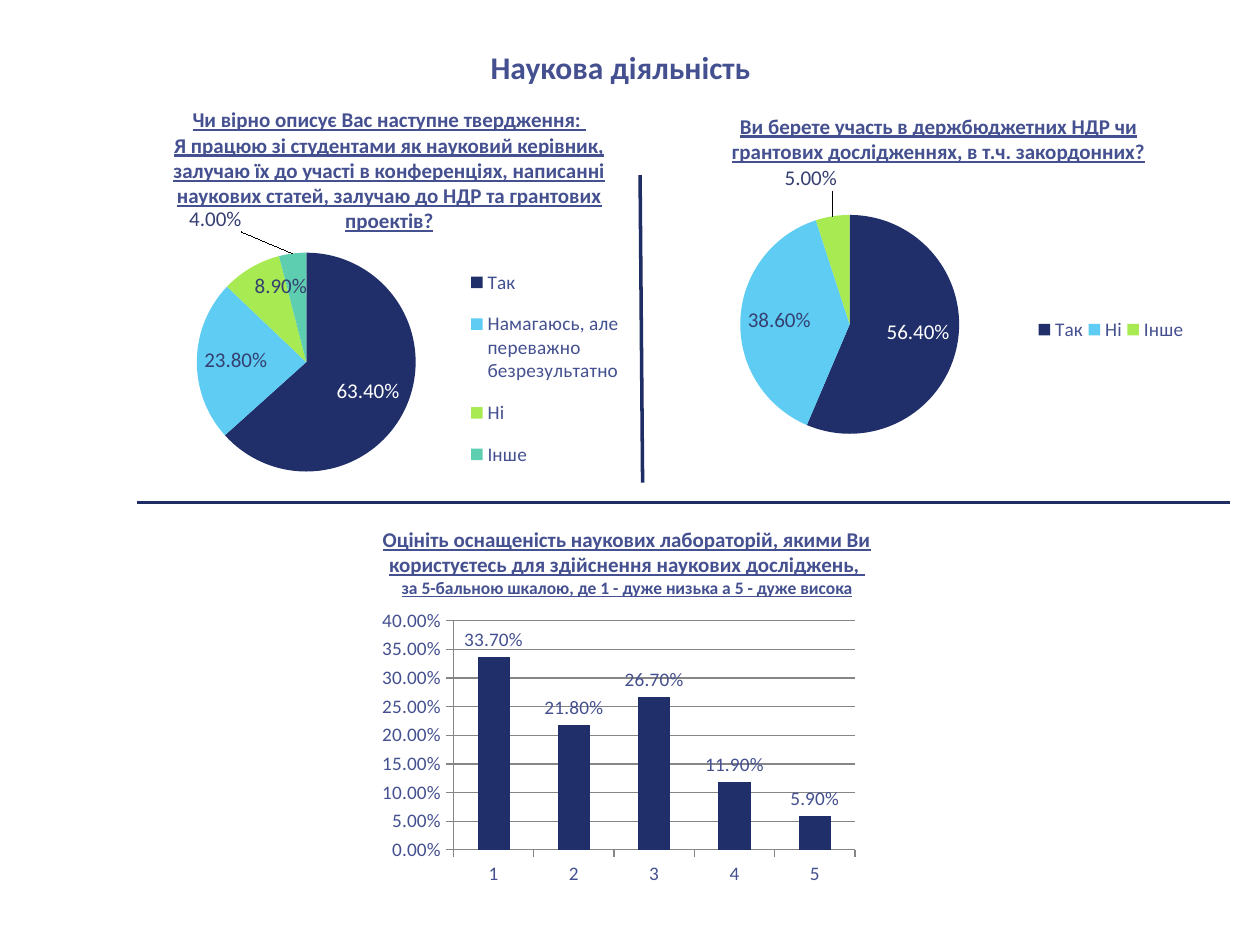
import pptx
import pptx.chart.data
import pptx.dml.color
import pptx.enum.chart
import pptx.enum.shapes
import pptx.enum.text
import pptx.oxml
import pptx.oxml.ns
import pptx.util
from pptx.util import Inches

RGBColor = pptx.dml.color.RGBColor
CHART_TYPE = pptx.enum.chart.XL_CHART_TYPE
LABEL_POSITION = pptx.enum.chart.XL_LABEL_POSITION

FONT = "Calibri"
TEXT_BLUE = RGBColor(0x44, 0x50, 0x8F)
LABEL_BLUE = RGBColor(0x35, 0x3F, 0x70)
RULE_NAVY = RGBColor(0x1F, 0x2D, 0x65)
NAVY = RGBColor(0x20, 0x2F, 0x6A)
SKY = RGBColor(0x5E, 0xCC, 0xF3)
LIME = RGBColor(0xA7, 0xEA, 0x52)
TEAL = RGBColor(0x5D, 0xCE, 0xAF)
GRID_GREY = RGBColor(0x86, 0x86, 0x86)
WHITE = RGBColor(0xFF, 0xFF, 0xFF)
PERCENT = "0.00%"


def style_font(font, size, color=TEXT_BLUE):
    font.name = FONT
    font.size = pptx.util.Pt(size)
    font.color.rgb = color


def set_layout(parent, index, **values):
    """Give a chart part a manual layout; values are shares of the chart."""
    for old in parent.findall(pptx.oxml.ns.qn("c:layout")):
        parent.remove(old)
    settings = "".join(f'<c:{tag} val="{value}"/>' for tag, value in values.items())
    parent.insert(index, pptx.oxml.parse_xml(
        f'<c:layout {pptx.oxml.ns.nsdecls("c")}>'
        f"<c:manualLayout>{settings}</c:manualLayout></c:layout>"))


def set_box_layout(parent, index, box, target=None):
    inner = {"layoutTarget": target} if target else {}
    x, y, w, h = box
    set_layout(parent, index, **inner, xMode="edge", yMode="edge", x=x, y=y, w=w, h=h)


def add_title(slide, box, text):
    title = slide.shapes.title
    title.left, title.top, title.width, title.height = map(Inches, box)
    title.text_frame.text = text
    title.text_frame.vertical_anchor = pptx.enum.text.MSO_ANCHOR.TOP
    paragraph = title.text_frame.paragraphs[0]
    paragraph.alignment = pptx.enum.text.PP_ALIGN.CENTER
    style_font(paragraph.runs[0].font, 18)
    paragraph.runs[0].font.bold = True


def add_question(slide, box, lines):
    """Place an underlined heading; lines are (text, size) pairs."""
    frame = slide.shapes.add_textbox(*map(Inches, box)).text_frame
    frame.word_wrap = True
    frame.auto_size = pptx.enum.text.MSO_AUTO_SIZE.SHAPE_TO_FIT_TEXT
    frame.text = "\n".join(text for text, _ in lines)
    for paragraph, (_, size) in zip(frame.paragraphs, lines):
        paragraph.alignment = pptx.enum.text.PP_ALIGN.CENTER
        font = paragraph.runs[0].font
        style_font(font, size)
        font.bold = font.underline = True


def add_rule(slide, start, end):
    rule = slide.shapes.add_connector(
        pptx.enum.shapes.MSO_CONNECTOR.STRAIGHT, *map(Inches, start + end))
    rule.line.color.rgb = RULE_NAVY
    rule.line.width = pptx.util.Pt(2)
    rule.element.spPr.append(
        pptx.oxml.parse_xml(f'<a:effectLst {pptx.oxml.ns.nsdecls("a")}/>'))


def add_chart(slide, box, kind, answers, plot_box):
    data = pptx.chart.data.CategoryChartData(number_format=PERCENT)
    data.categories = list(answers)
    data.add_series("Series 1", list(answers.values()))
    chart = slide.shapes.add_chart(kind, *map(Inches, box), data).chart
    chart.has_title = False
    chart.has_legend = False
    style_font(chart.font, 11)
    set_box_layout(chart.element.xpath(".//c:plotArea")[0], 0, plot_box, "inner")
    return chart


def add_pie(slide, box, answers, plot_box, legend_box, label_shift):
    """Place a pie whose last, smallest slice has its label pulled outside."""
    chart = add_chart(slide, box, CHART_TYPE.PIE, answers, plot_box)
    chart.has_legend = True
    chart.legend.position = pptx.enum.chart.XL_LEGEND_POSITION.RIGHT
    chart.legend.include_in_layout = False
    style_font(chart.legend.font, 11)
    set_box_layout(chart.element.xpath(".//c:legend")[0], 1, legend_box)

    slices = chart.plots[0].series[0]
    labels = slices.data_labels
    labels.show_value = True
    labels.number_format = PERCENT
    labels.number_format_is_linked = False
    labels.position = LABEL_POSITION.INSIDE_END
    style_font(labels.font, 12, LABEL_BLUE)
    for index, color in zip(range(len(answers)), (NAVY, SKY, LIME, TEAL)):
        fill = slices.points[index].format.fill
        fill.solid()
        fill.fore_color.rgb = color

    # White label on the dark slice, shifted label on the smallest one
    last = len(answers) - 1
    for index, color, position in (
            (0, WHITE, LABEL_POSITION.INSIDE_END),
            (last, LABEL_BLUE, LABEL_POSITION.OUTSIDE_END)):
        label = slices.points[index].data_label
        style_font(label.font, 12, color)
        label.position = position
    dx, dy = label_shift
    small_label = chart.element.xpath(f".//c:dLbl[c:idx/@val='{last}']")[0]
    set_layout(small_label, 1, x=dx, y=dy)


def add_ratings(slide, box, answers, plot_box):
    chart = add_chart(slide, box, CHART_TYPE.COLUMN_CLUSTERED, answers, plot_box)
    plot = chart.plots[0]
    plot.gap_width = 150
    plot.vary_by_categories = False
    bars = plot.series[0]
    bars.format.fill.solid()
    bars.format.fill.fore_color.rgb = NAVY
    bars.data_labels.show_value = True
    bars.data_labels.position = LABEL_POSITION.OUTSIDE_END
    style_font(bars.data_labels.font, 11)

    shares = chart.value_axis
    shares.minimum_scale, shares.maximum_scale, shares.major_unit = 0, 0.4, 0.05
    shares.has_major_gridlines = True
    shares.major_gridlines.format.line.color.rgb = GRID_GREY
    shares.tick_labels.number_format = PERCENT
    shares.tick_labels.number_format_is_linked = False
    for axis in (shares, chart.category_axis):
        axis.major_tick_mark = pptx.enum.chart.XL_TICK_MARK.OUTSIDE
        axis.format.line.color.rgb = GRID_GREY
        style_font(axis.tick_labels.font, 11)


def main():
    deck = pptx.Presentation()
    deck.slide_width, deck.slide_height = Inches(10), Inches(7.5)
    slide = deck.slides.add_slide(deck.slide_layouts[5])

    add_title(slide, (2.09, 0.33, 5.67, 0.4), "Наукова діяльність")
    add_rule(slide, (5.1, 3.83), (5.08, 1.39))
    add_rule(slide, (1.09, 3.99), (9.76, 3.99))

    # Right: funded research
    add_question(slide, (5.43, 0.85, 4.04, 0.5), [
        ("Ви берете участь в держбюджетних НДР чи грантових дослідженнях, "
         "в т.ч. закордонних?", 12)])
    add_pie(slide, (5.46, 1.16, 4.42, 2.83),
            {"Так": 0.564, "Ні": 0.386, "Інше": 0.05},
            plot_box=(0.094, 0.127, 0.393, 0.746),
            legend_box=(0.62, 0.33, 0.28, 0.37), label_shift=(0.01, -0.05))

    # Left: work with students
    add_question(slide, (1.07, 0.8, 4.04, 1.11), [
        ("Чи вірно описує Вас наступне твердження: ", 12),
        ("Я працюю зі студентами як науковий керівник, залучаю їх до участі в "
         "конференціях, написанні наукових статей, залучаю до НДР та грантових "
         "проектів?", 12)])
    add_pie(slide, (1.01, 1.1, 4.42, 2.83),
            {"Так": 0.634, "Намагаюсь, але переважно безрезультатно": 0.238,
             "Ні": 0.089, "Інше": 0.04},
            plot_box=(0.125, 0.316, 0.393, 0.746),
            legend_box=(0.6, 0.32, 0.3, 0.65), label_shift=(-0.09, -0.04))

    # Bottom: laboratory equipment
    add_ratings(slide, (2.91, 4.72, 4.03, 2.31),
                {"1": 0.337, "2": 0.218, "3": 0.267, "4": 0.119, "5": 0.059},
                plot_box=(0.171, 0.09, 0.791, 0.792))
    add_question(slide, (2.69, 4.13, 4.57, 0.67), [
        ("Оцініть оснащеність наукових лабораторій, якими Ви користуєтесь для "
         "здійснення наукових досліджень, ", 12),
        ("за 5-бальною шкалою, де 1 - дуже низька а 5 - дуже висока", 10)])

    deck.save("out.pptx")


if __name__ == "__main__":
    main()
